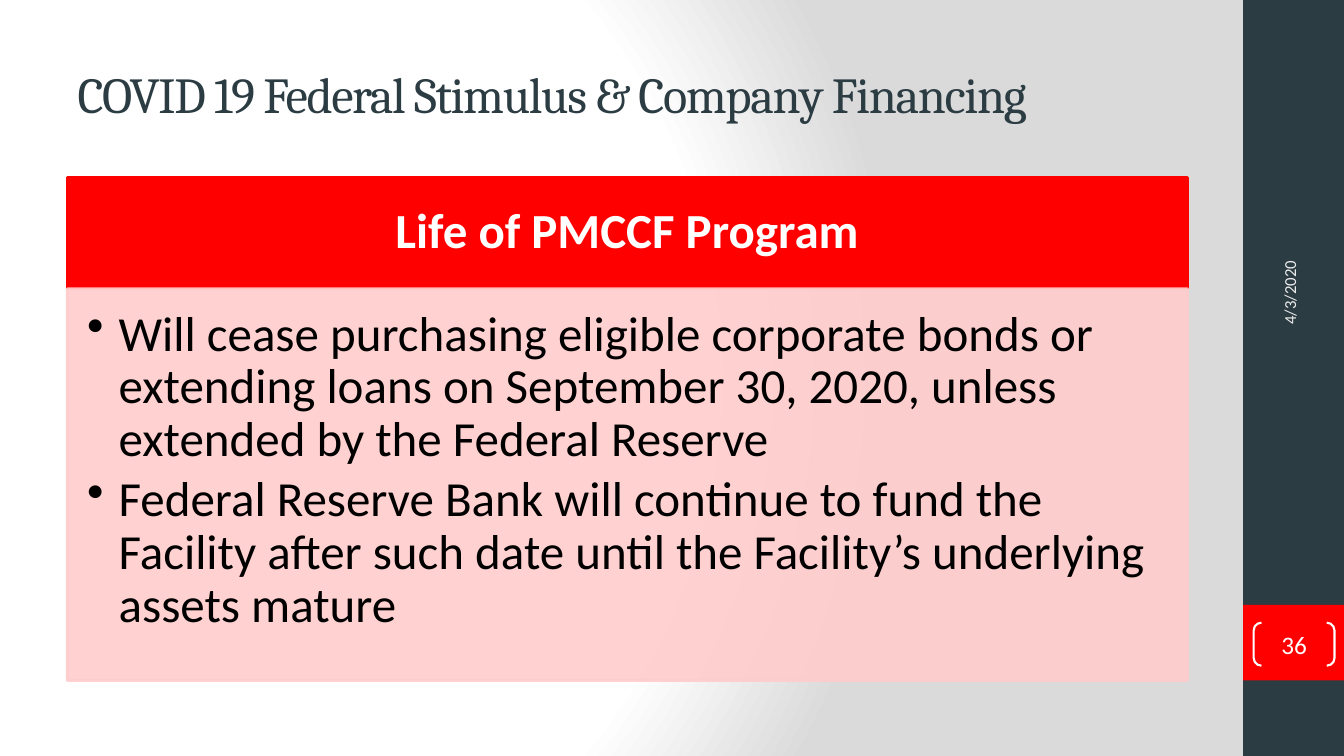
"""Builds the slide on the life of the PMCCF program."""
from dataclasses import dataclass

import pptx
import pptx.dml.color
import pptx.enum.shapes
import pptx.enum.text
import pptx.oxml
import pptx.oxml.ns
import pptx.util

EMU_PER_PX = 9525
ANCHOR = pptx.enum.text.MSO_ANCHOR
ALIGN = pptx.enum.text.PP_ALIGN
SHAPE = pptx.enum.shapes.MSO_SHAPE


@dataclass(frozen=True)
class Theme:
    """Colours, fonts and type sizes of the slide."""
    dark: str = "2C3C43"
    accent: str = "FF0000"
    tint: str = "FFCCCC"
    white: str = "FFFFFF"
    black: str = "000000"
    shade: str = "DADADA"
    pale: str = "EBEBEB"
    heading_font: str = "Cambria"
    body_font: str = "Calibri"
    title_size: int = 36
    panel_size: int = 35
    number_size: int = 18
    date_size: int = 12


THEME = Theme()
PANEL_LEFT, PANEL_WIDTH = 64, 1067
SIDEBAR_LEFT, SIDEBAR_WIDTH = 1184, 96
BULLETS = [
    "Will cease purchasing eligible corporate bonds or extending loans on "
    "September 30, 2020, unless extended by the Federal Reserve",
    "Federal Reserve Bank will continue to fund the Facility after such date "
    "until the Facility’s underlying assets mature",
]


def px(length):
    """Turn a length in px into EMU."""
    return pptx.util.Emu(length * EMU_PER_PX)


def rgb(code):
    """Turn a hexadecimal code into a colour."""
    return pptx.dml.color.RGBColor.from_string(code)


def add_background(page):
    """Give the page a circular gradient from white to grey."""
    stops = [(0, THEME.white), (75, THEME.white), (100, THEME.shade)]
    stop_xml = "".join(
        f'<a:gs pos="{place * 1000}"><a:srgbClr val="{color}"/></a:gs>'
        for place, color in stops)
    background = pptx.oxml.parse_xml(
        f'<p:bg {pptx.oxml.ns.nsdecls("p", "a")}><p:bgPr>'
        f'<a:gradFill rotWithShape="1"><a:gsLst>{stop_xml}</a:gsLst>'
        '<a:path path="circle">'
        '<a:fillToRect l="20000" t="50000" r="100000" b="50000"/></a:path>'
        '</a:gradFill><a:effectLst/></p:bgPr></p:bg>')
    page._element.cSld.insert(0, background)


def add_box(page, kind, place, fill=None, line=None, line_width=2, opacity=100):
    """Add a preset shape with an optional fill and outline."""
    box = page.shapes.add_shape(kind, *map(px, place))
    box.shadow.inherit = False
    if fill:
        box.fill.solid()
        box.fill.fore_color.rgb = rgb(fill)
    else:
        box.fill.background()
    if line:
        box.line.color.rgb = rgb(line)
        box.line.width = pptx.util.Pt(line_width)
    else:
        box.line.fill.background()
    if opacity < 100:
        for color in box._element.spPr.iter(pptx.oxml.ns.qn("a:srgbClr")):
            alpha = pptx.oxml.parse_xml(
                f'<a:alpha {pptx.oxml.ns.nsdecls("a")} val="{opacity * 1000}"/>')
            color.append(alpha)
    return box


def add_bullet(para, indent):
    """Give a paragraph a bullet with a hanging indent."""
    properties = para._p.get_or_add_pPr()
    properties.set("marL", str(px(indent)))
    properties.set("indent", str(-px(indent)))
    properties.append(pptx.oxml.parse_xml(
        f'<a:buChar {pptx.oxml.ns.nsdecls("a")} char="•"/>'))


def write(box, *texts, size, color, font=THEME.body_font, bold=False,
          align=ALIGN.LEFT, anchor=ANCHOR.MIDDLE, insets=(10, 5, 10, 5),
          line_spacing=None, space_after=None, indent=None, tracking=None):
    """Write one paragraph per text into a box, all in one format."""
    frame = box.text_frame
    frame.word_wrap = True
    frame.vertical_anchor = anchor
    (frame.margin_left, frame.margin_top,
     frame.margin_right, frame.margin_bottom) = map(px, insets)
    for index, text in enumerate(texts):
        para = frame.add_paragraph() if index else frame.paragraphs[0]
        if indent:
            add_bullet(para, indent)
        para.alignment = align
        if line_spacing:
            para.line_spacing = line_spacing
        if space_after:
            para.space_after = pptx.util.Pt(space_after)
        span = para.add_run()
        span.text = text
        span.font.name = font
        span.font.size = pptx.util.Pt(size)
        span.font.bold = bold
        span.font.color.rgb = rgb(color)
        if tracking:
            span._r.get_or_add_rPr().set("spc", str(tracking * 100))


def add_sidebar(page):
    """Add the dark strip with the date and the page number."""
    add_box(page, SHAPE.RECTANGLE, (SIDEBAR_LEFT, 0, SIDEBAR_WIDTH, 720),
            fill=THEME.dark)
    add_box(page, SHAPE.RECTANGLE, (SIDEBAR_LEFT, 576, SIDEBAR_WIDTH, 72),
            fill=THEME.accent)
    date = page.shapes.add_textbox(*map(px, (1100, 166, 256, 51)))
    date.rotation = 270
    write(date, "4/3/2020", size=THEME.date_size, color=THEME.pale)
    number = add_box(page, SHAPE.DOUBLE_BRACKET, (1194, 593, 77, 41),
                     line=THEME.white, line_width=1.5)
    number.adjustments[0] = 0.18
    write(number, "36", size=THEME.number_size, color=THEME.white,
          align=ALIGN.CENTER, insets=(0, 0, 0, 0))


def add_panel(page):
    """Add the red heading and the tinted box of bullets below it."""
    heading = add_box(page, SHAPE.RECTANGLE, (PANEL_LEFT, 169, PANEL_WIDTH, 106),
                      fill=THEME.accent, line=THEME.accent)
    write(heading, "Life of PMCCF Program", size=THEME.panel_size,
          color=THEME.white, bold=True, align=ALIGN.CENTER,
          insets=(26, 15, 26, 15), line_spacing=0.9)
    body = add_box(page, SHAPE.RECTANGLE, (PANEL_LEFT, 275, PANEL_WIDTH, 373),
                   fill=THEME.tint, line=THEME.tint, opacity=90)
    write(body, *BULLETS, size=THEME.panel_size, color=THEME.black,
          anchor=ANCHOR.TOP, insets=(19, 19, 26, 30), line_spacing=0.9,
          space_after=5, indent=30)


def main():
    """Build the slide and save it."""
    deck = pptx.Presentation()
    deck.slide_width, deck.slide_height = px(1280), px(720)
    page = deck.slides.add_slide(deck.slide_layouts[6])
    add_background(page)
    add_sidebar(page)
    title = page.shapes.add_textbox(*map(px, (PANEL_LEFT, 29, PANEL_WIDTH, 120)))
    write(title, "COVID 19 Federal Stimulus & Company Financing",
          size=THEME.title_size, color=THEME.dark, font=THEME.heading_font,
          tracking=-1)
    add_panel(page)
    deck.save("out.pptx")


if __name__ == "__main__":
    main()
